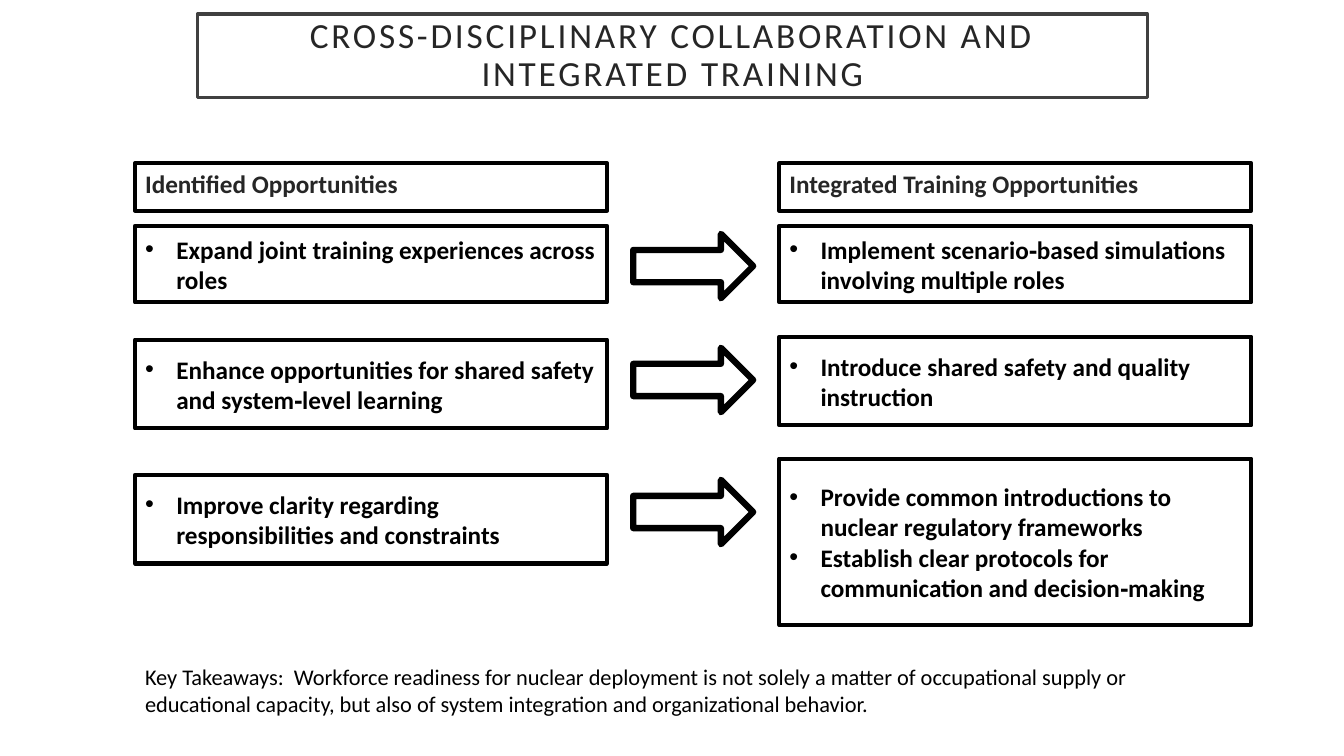
from lxml import etree
from pptx import Presentation
from pptx import util as u
from pptx.dml.color import RGBColor
from pptx.enum import shapes, text
from pptx.oxml import ns

BLACK = RGBColor(0, 0, 0)
WHITE = RGBColor(255, 255, 255)
DARK = RGBColor(0x26, 0x26, 0x26)
GREY = RGBColor(0x40, 0x40, 0x40)
FONT = "Calibri"
LEFT, RIGHT, WIDE = 1.34, 7.73, 4.68

ROWS = [
    ((2.24, 0.76, ["Expand joint training experiences across roles"]),
     (2.24, 0.76, ["Implement scenario‑based simulations involving multiple roles"]),
     2.64),
    ((3.37, 0.88, ["Enhance opportunities for shared safety and system‑level learning"]),
     (3.34, 0.88, ["Introduce shared safety and quality instruction"]),
     3.77),
    ((4.71, 0.88, ["Improve clarity regarding responsibilities and constraints"]),
     (4.55, 1.65, ["Provide common introductions to nuclear regulatory frameworks",
                   "Establish clear protocols for communication and decision‑making"]),
     5.08),
]


def draw(slide, kind, box, color, width):
    """Add a white outlined shape in the given box."""
    shape = slide.shapes.add_shape(kind, *map(u.Inches, box))
    shape.shadow.inherit = False
    shape.fill.solid()
    shape.fill.fore_color.rgb = WHITE
    shape.line.color.rgb = color
    shape.line.width = u.Pt(width)
    return shape


def write(para, words, size, color, bold=False):
    """Add one styled run to a paragraph."""
    run = para.add_run()
    run.text = words
    run.font.name = FONT
    run.font.size = u.Pt(size)
    run.font.bold = bold
    run.font.color.rgb = color
    return run


def bullet(para):
    """Give a paragraph a hanging round bullet."""
    props = para._p.get_or_add_pPr()
    props.set("marL", str(u.Inches(0.31)))
    props.set("indent", str(u.Inches(-0.31)))
    face = etree.SubElement(props, ns.qn("a:buFont"))
    face.set("typeface", "Arial")
    mark = etree.SubElement(props, ns.qn("a:buChar"))
    mark.set("char", "•")


def title(slide, box, words):
    """Place the framed, letter-spaced title."""
    shape = draw(slide, shapes.MSO_SHAPE.RECTANGLE, box, GREY, 2.5)
    frame = shape.text_frame
    frame.word_wrap = True
    frame.vertical_anchor = text.MSO_ANCHOR.MIDDLE
    frame.margin_left = frame.margin_right = u.Inches(0.2)
    frame.margin_top = frame.margin_bottom = u.Inches(0.2)
    para = frame.paragraphs[0]
    para.alignment = text.PP_ALIGN.CENTER
    para.line_spacing = 0.9
    run = write(para, words, 25.2, DARK)
    run.font._element.set("spc", "200")


def header(slide, box, words):
    """Place a column heading."""
    shape = draw(slide, shapes.MSO_SHAPE.RECTANGLE, box, BLACK, 3)
    frame = shape.text_frame
    frame.word_wrap = True
    frame.vertical_anchor = text.MSO_ANCHOR.TOP
    para = frame.paragraphs[0]
    para.alignment = text.PP_ALIGN.LEFT
    write(para, words, 18, DARK, True)


def card(slide, box, items):
    """Place a box of bold bullets."""
    shape = draw(slide, shapes.MSO_SHAPE.RECTANGLE, box, BLACK, 3)
    frame = shape.text_frame
    frame.word_wrap = True
    frame.vertical_anchor = text.MSO_ANCHOR.MIDDLE
    for i, item in enumerate(items):
        para = frame.add_paragraph() if i else frame.paragraphs[0]
        para.alignment = text.PP_ALIGN.LEFT
        bullet(para)
        write(para, item, 18, BLACK, True)


def arrow(slide, mid):
    """Place a block arrow between the columns, centred on a height."""
    wide, high = 1.19, 0.64
    x = (LEFT + WIDE + RIGHT - wide) / 2
    box = (x, mid - high / 2, wide, high)
    draw(slide, shapes.MSO_SHAPE.RIGHT_ARROW, box, BLACK, 4.5)


def footer(slide, box, words):
    """Place the closing takeaway text."""
    frame = slide.shapes.add_textbox(*map(u.Inches, box)).text_frame
    frame.word_wrap = True
    write(frame.paragraphs[0], words, 16, BLACK)


def main():
    """Build and save the slide."""
    deck = Presentation()
    deck.slide_width = u.Inches(13.33)
    deck.slide_height = u.Inches(7.5)
    slide = deck.slides.add_slide(deck.slide_layouts[6])
    title(slide, (1.96, 0.14, 9.42, 0.83),
          "CROSS-DISCIPLINARY COLLABORATION AND INTEGRATED TRAINING")
    header(slide, (LEFT, 1.62, WIDE, 0.47), "Identified Opportunities")
    header(slide, (RIGHT, 1.62, WIDE, 0.47), "Integrated Training Opportunities")
    for need, plan, mid in ROWS:
        for x, (top, high, items) in ((LEFT, need), (RIGHT, plan)):
            card(slide, (x, top, WIDE, high), items)
        arrow(slide, mid)
    footer(slide, (LEFT, 6.53, 10.65, 0.64),
           "Key Takeaways:  Workforce readiness for nuclear deployment is not "
           "solely a matter of occupational supply or educational capacity, "
           "but also of system integration and organizational behavior.")
    deck.save("out.pptx")


if __name__ == "__main__":
    main()
